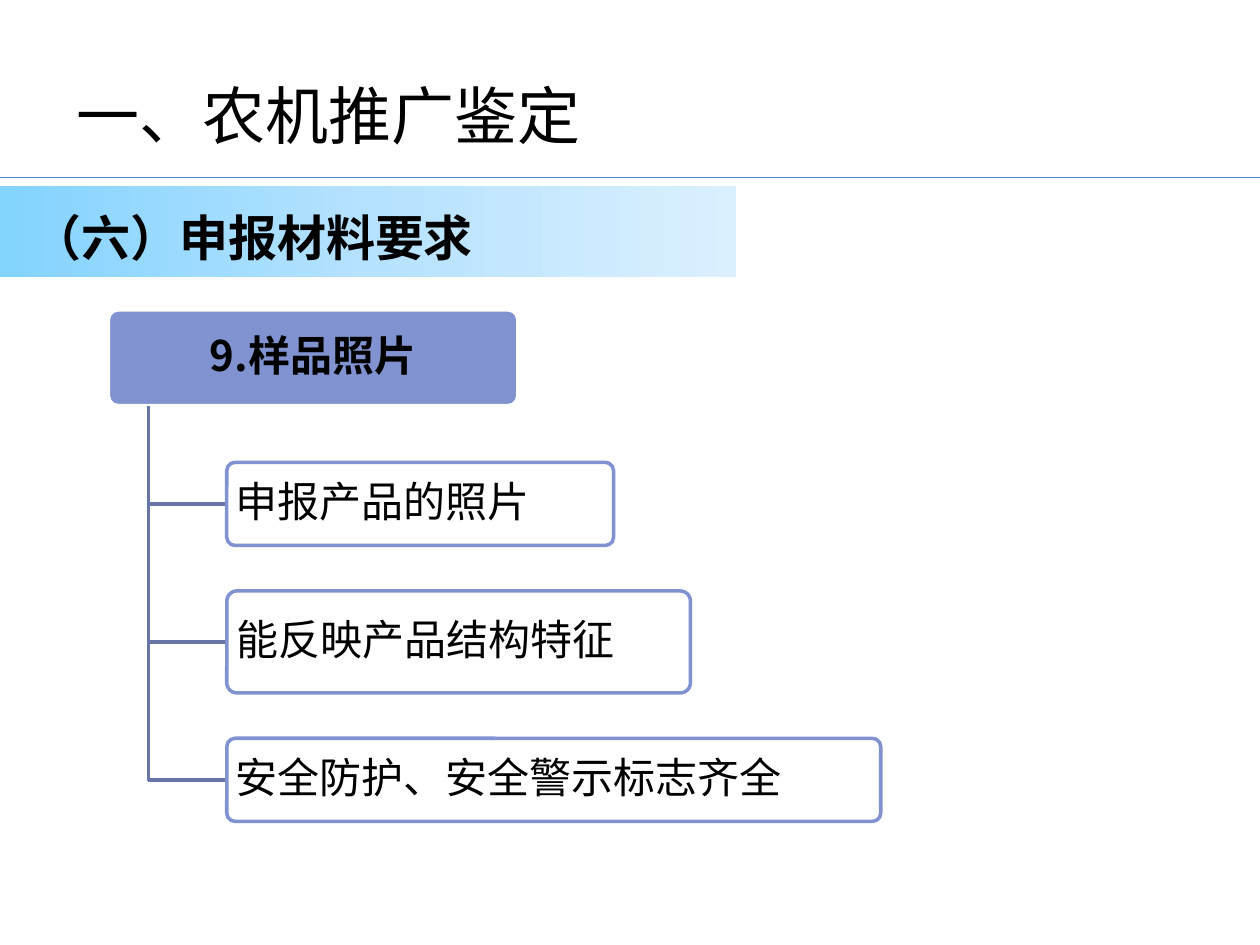
from copy import deepcopy
from typing import NamedTuple

import pptx
import pptx.dml.color
import pptx.enum.shapes
import pptx.enum.text
import pptx.oxml
import pptx.oxml.ns
import pptx.util

WIDE, HIGH = pptx.util.Inches(10), pptx.util.Inches(7.5)
FONT = "Noto Sans CJK SC"
HUES = {
    "ink": "000000", "white": "FFFFFF", "rule": "4C87C3", "head": "8093D0",
    "link": "6776A7", "deep": "83D3FF", "mid": "B5E2FF", "pale": "DBF0FF",
}
SHAPE = pptx.enum.shapes.MSO_SHAPE
ALIGN = pptx.enum.text.PP_ALIGN
ANCHOR = pptx.enum.text.MSO_ANCHOR


class Box(NamedTuple):
    """A frame in percent of the slide's width and height."""
    left: float
    top: float
    wide: float
    high: float

    def place(self) -> tuple:
        return (across(self.left), down(self.top),
                across(self.wide), down(self.high))


class Item(NamedTuple):
    text: str
    wide: float
    high: float


def across(share: float) -> int:
    return round(WIDE * share / 100)


def down(share: float) -> int:
    return round(HIGH * share / 100)


def hue(name: str):
    return pptx.dml.color.RGBColor.from_string(HUES[name])


def write(shape, text: str, *, size: float, bold=False, align=ALIGN.LEFT,
          anchor=ANCHOR.MIDDLE, pad=(0.1, 0.05), left=None, space=1.0) -> None:
    frame = shape.text_frame
    frame.word_wrap = True
    frame.vertical_anchor = anchor
    side, edge = map(pptx.util.Inches, pad)
    frame.margin_left = side if left is None else pptx.util.Inches(left)
    frame.margin_right = side
    frame.margin_top = frame.margin_bottom = edge
    para = frame.paragraphs[0]
    para.alignment = align
    para.line_spacing = space
    run = para.add_run()
    run.text = text
    font = run.font
    font.size, font.bold, font.name = pptx.util.Pt(size), bold, FONT
    font.color.rgb = hue("ink")
    east = pptx.oxml.parse_xml(
        f'<a:ea {pptx.oxml.ns.nsdecls("a")} typeface="{FONT}"/>')
    run.font._element.find(pptx.oxml.ns.qn("a:latin")).addnext(east)


def stroke(line, name: str, width: float) -> None:
    line.color.rgb = hue(name)
    line.width = pptx.util.Pt(width)


def card(slide, box: Box, text: str, *, fill: str, edge: str, **style) -> None:
    shape = slide.shapes.add_shape(SHAPE.ROUNDED_RECTANGLE, *box.place())
    shape.adjustments[0] = 0.1
    shape.shadow.inherit = False
    shape.fill.solid()
    shape.fill.fore_color.rgb = hue(fill)
    stroke(shape.line, edge, 2)
    write(shape, text, size=24, pad=(0.05, 0.03), space=0.9, **style)


def elbow(slide, start: tuple, end: tuple) -> None:
    """Draw a line that goes down and then right."""
    (x, y), (far, low) = start, end
    path = slide.shapes.build_freeform(across(x), down(y))
    path.add_line_segments([(across(x), down(low)), (across(far), down(low))],
                           close=False)
    shape = path.convert_to_shape()
    shape.shadow.inherit = False
    shape.fill.background()
    stroke(shape.line, "link", 2)


def band(slide, box: Box) -> None:
    """Draw the bar that fades from left to right."""
    shape = slide.shapes.add_shape(SHAPE.RECTANGLE, *box.place())
    shape.shadow.inherit = False
    shape.line.fill.background()
    shape.fill.gradient()
    shape.fill.gradient_angle = 0
    first = shape.fill._fill._gradFill.gsLst[0]
    first.addnext(deepcopy(first))
    names = ("deep", "mid", "pale")
    for stop, name, spot in zip(shape.fill.gradient_stops, names, (0, 0.5, 1)):
        stop.color.rgb = hue(name)
        stop.position = spot


def rule(slide, y: float) -> None:
    line = slide.shapes.add_connector(
        pptx.enum.shapes.MSO_CONNECTOR.STRAIGHT, 0, down(y), WIDE, down(y))
    stroke(line.line, "rule", 0.75)
    line._element.spPr.append(
        pptx.oxml.parse_xml(f'<a:effectLst {pptx.oxml.ns.nsdecls("a")}/>'))


def tree(slide, head: Box, title: str, items: list[Item]) -> None:
    stem, left, gap = 11.8, 18, 4.8
    base = head.top + head.high
    card(slide, head, title, fill="head", edge="white",
         bold=True, align=ALIGN.CENTER)
    top = base + 6
    for item in items:
        elbow(slide, (stem, base), (left, top + item.high / 2))
        card(slide, Box(left, top, item.wide, item.high), item.text,
             fill="white", edge="head")
        top += item.high + gap


def main() -> None:
    deck = pptx.Presentation()
    deck.slide_width, deck.slide_height = WIDE, HIGH
    slide = deck.slides.add_slide(deck.slide_layouts[6])

    title = slide.shapes.add_textbox(*Box(-0.8, 6.27, 90, 11.73).place())
    write(title, "一、农机推广鉴定", size=36, left=0.69)
    rule(slide, 18.8)
    band(slide, Box(0, 19.73, 58.4, 9.6))
    part = slide.shapes.add_textbox(*Box(1.6, 21.33, 53.1, 7.6).place())
    write(part, "（六）申报材料要求", size=28, bold=True, anchor=ANCHOR.TOP)
    tree(slide, Box(8.6, 32.8, 32.5, 10.13), "9.样品照片", [
        Item("申报产品的照片", 30.7, 8.8),
        Item("能反映产品结构特征", 36.8, 10.8),
        Item("安全防护、安全警示标志齐全", 51.9, 8.8),
    ])
    deck.save("out.pptx")


if __name__ == "__main__":
    main()
